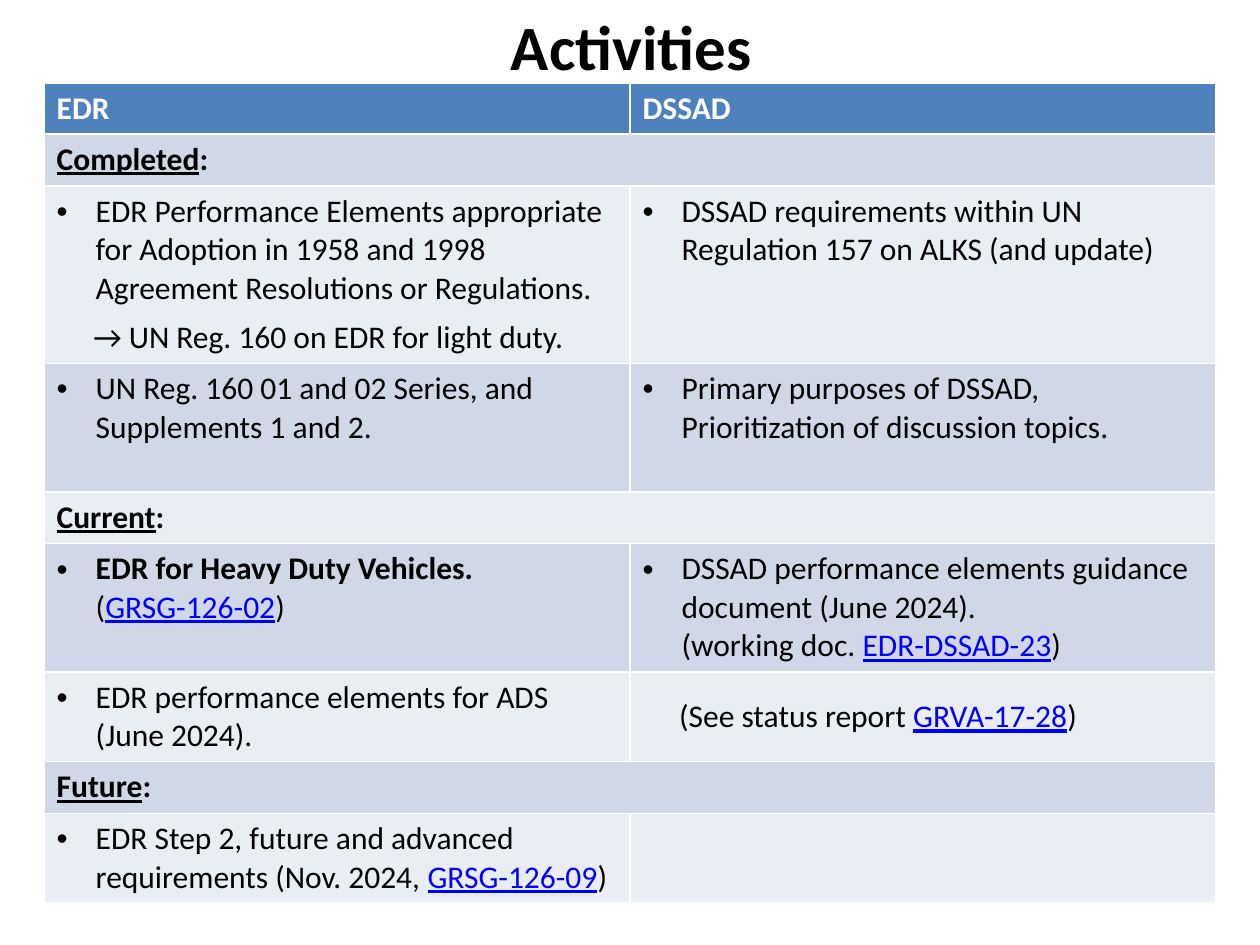
from lxml import etree
from pptx import Presentation
from pptx.dml.color import RGBColor
from pptx.enum.text import MSO_ANCHOR, PP_ALIGN
from pptx.oxml.ns import qn
from pptx.util import Inches, Pt

MIDDLE = MSO_ANCHOR.MIDDLE
TOP = MSO_ANCHOR.TOP
CENTER = PP_ALIGN.CENTER

BLACK = RGBColor(0x00, 0x00, 0x00)
WHITE = RGBColor(0xFF, 0xFF, 0xFF)
BLUE = RGBColor(0x4F, 0x81, 0xBD)
DARK = RGBColor(0xD0, 0xD8, 0xE8)
LIGHT = RGBColor(0xE9, 0xED, 0xF4)
LINK = RGBColor(0x00, 0x00, 0xFF)

# Run styles: bold, underline, colour
PLAIN = (False, False, BLACK)
BOLD = (True, False, BLACK)
UNDER = (True, True, BLACK)
REF = (False, True, LINK)
HEAD = (True, False, WHITE)

# Paragraph layouts: left margin, first-line indent, bullet
FLUSH = (0, 0, False)
ITEM = (0.31, -0.31, True)
NOTE = (0.29, 0, False)


def text(words, style=PLAIN, form=ITEM):
    return form, [(words, style)]


def cited(before, ref, form=ITEM):
    return form, [(before, PLAIN), (ref, REF), (")", PLAIN)]


def phase(name):
    return [[(FLUSH, [(name, UNDER), (":", BOLD)])]]


# Each row: height, then its cells; a single cell spans both columns
ROWS = [
    (0.4, [[text("EDR", HEAD, FLUSH)], [text("DSSAD", HEAD, FLUSH)]]),
    (0.41, phase("Completed")),
    (1.41, [
        [text("EDR Performance Elements appropriate for Adoption in 1958 "
              "and 1998 Agreement Resolutions or Regulations."),
         text("→ UN Reg. 160 on EDR for light duty.", form=NOTE)],
        [text("DSSAD requirements within UN Regulation 157 on ALKS "
              "(and update)")]]),
    (1.02, [
        [text("UN Reg. 160 01 and 02 Series, and\nSupplements 1 and 2.")],
        [text("Primary purposes of DSSAD, Prioritization of discussion "
              "topics.")]]),
    (0.41, phase("Current")),
    (1.02, [
        [(ITEM, [("EDR for Heavy Duty Vehicles.\n", BOLD), ("(", PLAIN),
                 ("GRSG-126-02", REF), (")", PLAIN)])],
        [cited("DSSAD performance elements guidance document (June 2024).\n"
               "(working doc. ", "EDR-DSSAD-23")]]),
    (0.71, [
        [text("EDR performance elements for ADS (June 2024).")],
        [cited("(See status report ", "GRVA-17-28", NOTE)]]),
    (0.41, phase("Future")),
    (0.71, [
        [cited("EDR Step 2, future and advanced requirements (Nov. 2024, ",
               "GRSG-126-09")],
        []]),
]


class Deck:
    font = "Calibri"
    size = 18
    gap = 6.4

    def __init__(self):
        self.file = Presentation()
        self.file.slide_width = Inches(10)
        self.file.slide_height = Inches(7.5)
        self.slide = self.file.slides.add_slide(self.file.slide_layouts[5])

    def run(self, para, words, style, size):
        bold, under, color = style
        for num, line in enumerate(words.split("\n")):
            if num:
                para.add_line_break()
            if line:
                run = para.add_run()
                run.text = line
                font = run.font
                font.name, font.size = self.font, Pt(size)
                font.bold, font.underline = bold, under
                font.color.rgb = color

    def title(self, words, left, top, width, height):
        shape = self.slide.shapes.title
        shape.left, shape.top = Inches(left), Inches(top)
        shape.width, shape.height = Inches(width), Inches(height)
        frame = shape.text_frame
        frame.vertical_anchor = MIDDLE
        para = frame.paragraphs[0]
        para.alignment = CENTER
        self.run(para, words, BOLD, 36)

    def para(self, para, form, runs):
        margin, indent, bullet = form
        para.space_before = Pt(self.gap)
        props = para._p.get_or_add_pPr()
        props.set("marL", str(Inches(margin)))
        props.set("indent", str(Inches(indent)))
        if bullet:
            etree.SubElement(props, qn("a:buFont")).set("typeface", "Arial")
            etree.SubElement(props, qn("a:buChar")).set("char", "•")
        for words, style in runs:
            self.run(para, words, style, self.size)

    def cell(self, cell, paras, fill):
        cell.fill.solid()
        cell.fill.fore_color.rgb = fill
        frame = cell.text_frame
        for num, (form, runs) in enumerate(paras):
            para = frame.add_paragraph() if num else frame.paragraphs[0]
            self.para(para, form, runs)
        # A lone note sits halfway down its cell
        lone = bool(paras) and paras[0][0] == NOTE
        cell.vertical_anchor = MIDDLE if lone else TOP

    def table(self, rows, left, top, width):
        high = sum(row[0] for row in rows)
        grid = self.slide.shapes.add_table(
            len(rows), 2, Inches(left), Inches(top),
            Inches(width), Inches(high)).table
        for num, (tall, cells) in enumerate(rows):
            grid.rows[num].height = Inches(tall)
            fill = BLUE if num == 0 else DARK if num % 2 else LIGHT
            if len(cells) == 1:
                grid.cell(num, 0).merge(grid.cell(num, 1))
            for col, paras in enumerate(cells):
                self.cell(grid.cell(num, col), paras, fill)

    def save(self):
        self.file.save("out.pptx")


def main():
    deck = Deck()
    # Heading
    deck.title("Activities", 0.01, 0.13, 10, 0.46)
    # Work by phase, one column per group
    deck.table(ROWS, 0.35, 0.66, 9.3)
    deck.save()


if __name__ == "__main__":
    main()
